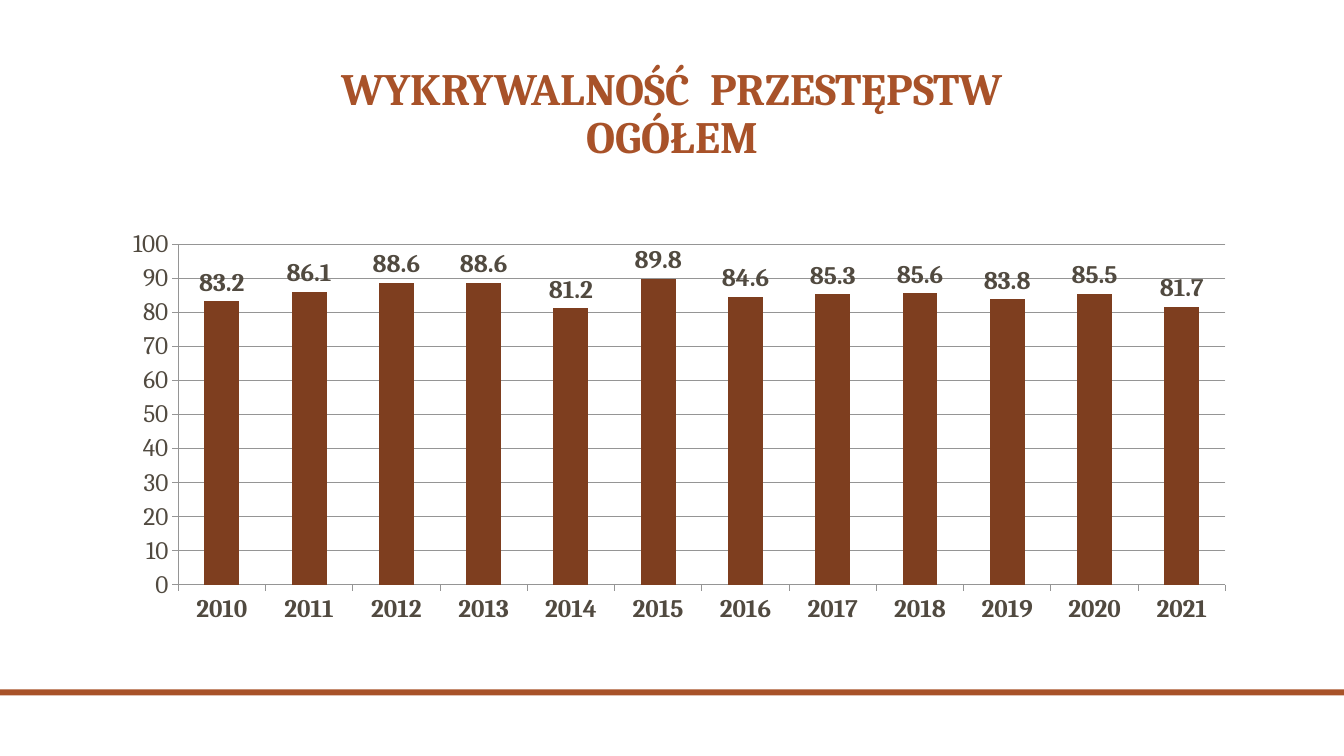
from lxml.etree import SubElement
from pptx import Presentation
from pptx.chart.data import CategoryChartData
from pptx.dml.color import RGBColor
from pptx.enum.chart import XL_CHART_TYPE, XL_LABEL_POSITION, XL_TICK_MARK
from pptx.enum.shapes import MSO_SHAPE
from pptx.enum.text import MSO_ANCHOR, PP_ALIGN
from pptx.oxml import parse_xml
from pptx.oxml.ns import nsdecls, qn
from pptx.util import Inches, Pt

RUST = RGBColor(0xA8, 0x52, 0x29)
BROWN = RGBColor(0x7E, 0x3E, 0x1F)
INK = RGBColor(0x51, 0x4A, 0x40)
GREY = RGBColor(0x95, 0x95, 0x95)
WIDE, HIGH = 13.33, 7.5
RATES = [83.2, 86.1, 88.6, 88.6, 81.2, 89.8, 84.6, 85.3, 85.6, 83.8, 85.5, 81.7]


class Page:
    """Draws styled elements on one slide, placed by shares of its size."""

    face = "Cambria"

    def __init__(self, deck):
        self.slide = deck.slides.add_slide(deck.slide_layouts[6])
        self.shapes = self.slide.shapes

    def place(self, left, top, width, height):
        return (Inches(left * WIDE), Inches(top * HIGH),
                Inches(width * WIDE), Inches(height * HIGH))

    def style(self, font, size, color, bold=False):
        font.name, font.size, font.bold = self.face, Pt(size), bold
        font.color.rgb = color

    def band(self, *spot):
        bar = self.shapes.add_shape(MSO_SHAPE.RECTANGLE, *self.place(*spot))
        bar.shadow.inherit = False
        bar.fill.solid()
        bar.fill.fore_color.rgb = RUST
        bar.line.fill.background()

    def title(self, lines, *spot):
        frame = self.shapes.add_textbox(*self.place(*spot)).text_frame
        frame.word_wrap = True
        frame.vertical_anchor = MSO_ANCHOR.BOTTOM
        para = frame.paragraphs[0]
        para.alignment = PP_ALIGN.CENTER
        para.line_spacing = 0.9
        for row, text in enumerate(lines):
            if row:
                para.add_line_break()
            run = para.add_run()
            run.text = text
            self.style(run.font, 32, RUST, True)

    def chart(self, names, values, *spot):
        data = CategoryChartData()
        data.categories = names
        data.add_series("Series 1", values)
        chart = self.shapes.add_chart(
            XL_CHART_TYPE.COLUMN_CLUSTERED, *self.place(*spot), data).chart
        chart.has_legend = chart.has_title = False
        self.style(chart.font, 18, INK)
        plot = chart.plots[0]
        plot.gap_width = 150
        plot.vary_by_categories = False
        fill = plot.series[0].format.fill
        fill.solid()
        fill.fore_color.rgb = BROWN
        plot.has_data_labels = True
        labels = plot.data_labels
        labels.show_value = True
        labels.position = XL_LABEL_POSITION.OUTSIDE_END
        self.style(labels.font, 18, INK, True)
        self.axis(chart.category_axis, True)
        scale = chart.value_axis
        self.axis(scale, False)
        scale.minimum_scale, scale.maximum_scale, scale.major_unit = 0, 100, 10
        scale.has_major_gridlines = True
        self.rule(scale.major_gridlines.format.line)
        self.frame(chart, x=0.06, y=0.05, w=0.92, h=0.83)

    def axis(self, axis, bold):
        axis.major_tick_mark = XL_TICK_MARK.OUTSIDE
        axis.minor_tick_mark = XL_TICK_MARK.NONE
        axis.has_major_gridlines = False
        self.style(axis.tick_labels.font, 18, INK, bold)
        self.rule(axis.format.line)

    def rule(self, line):
        line.color.rgb = GREY
        line.width = Pt(0.75)

    def frame(self, chart, **shares):
        area = chart.element.find(".//" + qn("c:plotArea"))
        for old in area.findall(qn("c:layout")):
            area.remove(old)
        layout = parse_xml(f"<c:layout {nsdecls('c')}><c:manualLayout/></c:layout>")
        area.insert(0, layout)
        parts = {"layoutTarget": "inner", "xMode": "edge", "yMode": "edge", **shares}
        for tag, value in parts.items():
            SubElement(layout[0], qn("c:" + tag)).set("val", str(value))


def main():
    deck = Presentation()
    deck.slide_width, deck.slide_height = Inches(WIDE), Inches(HIGH)
    page = Page(deck)
    page.band(0, 6.84 / HIGH, 1, 0.06 / HIGH)
    page.title(["WYKRYWALNOŚĆ  PRZESTĘPSTW", "OGÓŁEM"],
               1.42 / WIDE, 0.42 / HIGH, 10.5 / WIDE, 1.25 / HIGH)
    years = [str(year) for year in range(2010, 2022)]
    page.chart(years, RATES, 1.09 / WIDE, 2.22 / HIGH, 11.29 / WIDE, 4.07 / HIGH)
    deck.save("out.pptx")


if __name__ == "__main__":
    main()
